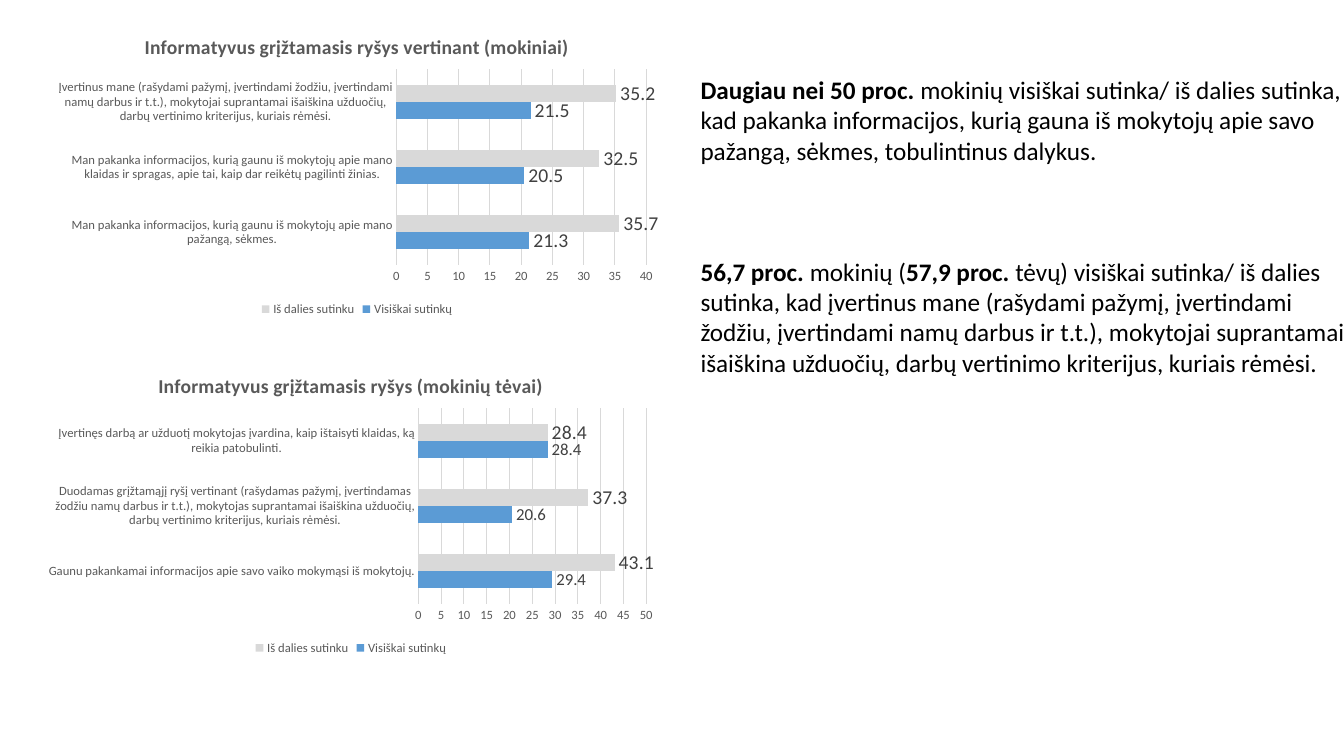
from lxml.etree import SubElement
from pptx import Presentation
from pptx.chart.data import CategoryChartData
from pptx.dml.color import RGBColor
from pptx.enum.chart import XL_CHART_TYPE as ChartType, XL_LABEL_POSITION as LabelPosition
from pptx.enum.chart import XL_LEGEND_POSITION as LegendPosition, XL_TICK_MARK as TickMark
from pptx.enum.text import MSO_AUTO_SIZE as AutoSize
from pptx.oxml.ns import qn
from pptx.util import Inches, Pt

BLACK = RGBColor(0x00, 0x00, 0x00)
LABEL_GRAY = RGBColor(0x40, 0x40, 0x40)
TEXT_GRAY = RGBColor(0x59, 0x59, 0x59)
PALE_GRAY = RGBColor(0xD9, 0xD9, 0xD9)
BLUE = RGBColor(0x5B, 0x9B, 0xD5)
CHART_HEIGHT = 3
PLOT_TOP, PLOT_HEIGHT = 0.51, 1.94

PUPILS = {
    "title": "Informatyvus grįžtamasis ryšys vertinant (mokiniai)",
    "box": (0.47, 0.18, 6.14),
    "plot": (3.46, 2.48),
    "maximum": 40,
    "answers": [
        ("Man pakanka informacijos, kurią gaunu iš mokytojų apie mano pažangą, sėkmes.",
         21.3, 35.7),
        ("Man pakanka informacijos, kurią gaunu iš mokytojų apie mano klaidas ir spragas, "
         "apie tai, kaip dar reikėtų pagilinti žinias.", 20.5, 32.5),
        ("Įvertinus mane (rašydami pažymį, įvertindami žodžiu, įvertindami namų darbus "
         "ir t.t.), mokytojai suprantamai išaiškina užduočių, darbų vertinimo kriterijus, "
         "kuriais rėmėsi.", 21.5, 35.2),
    ],
    "label_sizes": (14, 14),
}
PARENTS = {
    "title": "Informatyvus grįžtamasis ryšys (mokinių tėvai)",
    "box": (0.36, 3.54, 6.24),
    "plot": (3.79, 2.26),
    "maximum": 50,
    "answers": [
        ("Gaunu pakankamai informacijos apie savo vaiko mokymąsi iš mokytojų.", 29.4, 43.1),
        ("Duodamas grįžtamąjį ryšį vertinant (rašydamas pažymį, įvertindamas žodžiu namų "
         "darbus ir t.t.), mokytojas suprantamai išaiškina užduočių, darbų vertinimo "
         "kriterijus, kuriais rėmėsi.", 20.6, 37.3),
        ("Įvertinęs darbą ar užduotį mokytojas įvardina, kaip ištaisyti klaidas, "
         "ką reikia patobulinti.", 28.4, 28.4),
    ],
    "label_sizes": (12, 14),
}
FINDINGS = [
    [("Daugiau nei 50 proc. ", True),
     ("mokinių visiškai sutinka/ iš dalies sutinka, kad pakanka informacijos, kurią gauna "
      "iš mokytojų apie savo pažangą, sėkmes, tobulintinus dalykus.", False)],
    [("56,7 proc. ", True), ("mokinių (", False), ("57,9 proc. ", True),
     ("tėvų) visiškai sutinka/ iš dalies sutinka, kad įvertinus mane (rašydami pažymį, "
      "įvertindami žodžiu, įvertindami namų darbus ir t.t.), mokytojai suprantamai "
      "išaiškina užduočių, darbų vertinimo kriterijus, kuriais rėmėsi.", False)],
]


def apply(target, values):
    for attribute, value in values.items():
        setattr(target, attribute, value)


def style_font(font, size, color, bold=False):
    apply(font, {"name": "Calibri", "size": Pt(size), "bold": bold})
    font.color.rgb = color


def style_line(line):
    line.color.rgb = PALE_GRAY
    line.width = Pt(0.75)


def place_plot(chart, chart_width, left, width):
    plot_area = chart._chartSpace.chart.plotArea
    layout = plot_area.find(qn("c:layout"))
    if layout is None:
        layout = SubElement(plot_area, qn("c:layout"))
        plot_area.insert(0, layout)
    manual = SubElement(layout, qn("c:manualLayout"))
    settings = {
        "layoutTarget": "inner", "xMode": "edge", "yMode": "edge",
        "x": left / chart_width, "y": PLOT_TOP / CHART_HEIGHT,
        "w": width / chart_width, "h": PLOT_HEIGHT / CHART_HEIGHT,
    }
    for tag, value in settings.items():
        SubElement(manual, qn(f"c:{tag}")).set("val", str(value))


def style_axes(chart, maximum):
    for axis in (chart.category_axis, chart.value_axis):
        apply(axis, {"major_tick_mark": TickMark.NONE, "minor_tick_mark": TickMark.NONE})
        style_font(axis.tick_labels.font, 9, TEXT_GRAY)
    style_line(chart.category_axis.format.line)
    values = chart.value_axis
    apply(values, {"minimum_scale": 0, "maximum_scale": maximum, "major_unit": 5})
    values.format.line.fill.background()
    style_line(values.major_gridlines.format.line)


def style_series(series, color, label_size):
    series.format.fill.solid()
    series.format.fill.fore_color.rgb = color
    labels = series.data_labels
    apply(labels, {"show_value": True, "position": LabelPosition.OUTSIDE_END})
    style_font(labels.font, label_size, LABEL_GRAY)


def add_survey_chart(slide, survey):
    statements, full_agreement, partial_agreement = zip(*survey["answers"])
    data = CategoryChartData()
    data.categories = statements
    data.add_series("Visiškai sutinkų", full_agreement)
    data.add_series("Iš dalies sutinku", partial_agreement)
    left, top, width = survey["box"]
    chart = slide.shapes.add_chart(
        ChartType.BAR_CLUSTERED, Inches(left), Inches(top),
        Inches(width), Inches(CHART_HEIGHT), data).chart
    style_font(chart.font, 10, BLACK)

    heading = chart.chart_title
    heading.include_in_layout = False
    heading.text_frame.text = survey["title"]
    style_font(heading.text_frame.paragraphs[0].runs[0].font, 14, TEXT_GRAY, True)

    chart.has_legend = True
    apply(chart.legend, {"position": LegendPosition.BOTTOM, "include_in_layout": False})
    style_font(chart.legend.font, 9, TEXT_GRAY)

    style_axes(chart, survey["maximum"])
    apply(chart.plots[0], {"gap_width": 182, "vary_by_categories": False})
    for series, color, size in zip(chart.series, (BLUE, PALE_GRAY), survey["label_sizes"]):
        style_series(series, color, size)
    place_plot(chart, width, *survey["plot"])


def add_findings(slide):
    frame = slide.shapes.add_textbox(
        Inches(6.85), Inches(0.69), Inches(6.67), Inches(3.13)).text_frame
    apply(frame, {"word_wrap": True, "auto_size": AutoSize.SHAPE_TO_FIT_TEXT})
    for index, finding in enumerate(FINDINGS):
        paragraph = frame.add_paragraph() if index else frame.paragraphs[0]
        paragraph.space_before = Pt(65 * index)
        for text, bold in finding:
            run = paragraph.add_run()
            run.text = text
            style_font(run.font, 18, BLACK, bold)


def main():
    deck = Presentation()
    apply(deck, {"slide_width": Inches(13.33), "slide_height": Inches(7.5)})
    slide = deck.slides.add_slide(deck.slide_layouts[6])
    add_survey_chart(slide, PUPILS)
    add_findings(slide)
    add_survey_chart(slide, PARENTS)
    deck.save("out.pptx")


if __name__ == "__main__":
    main()
